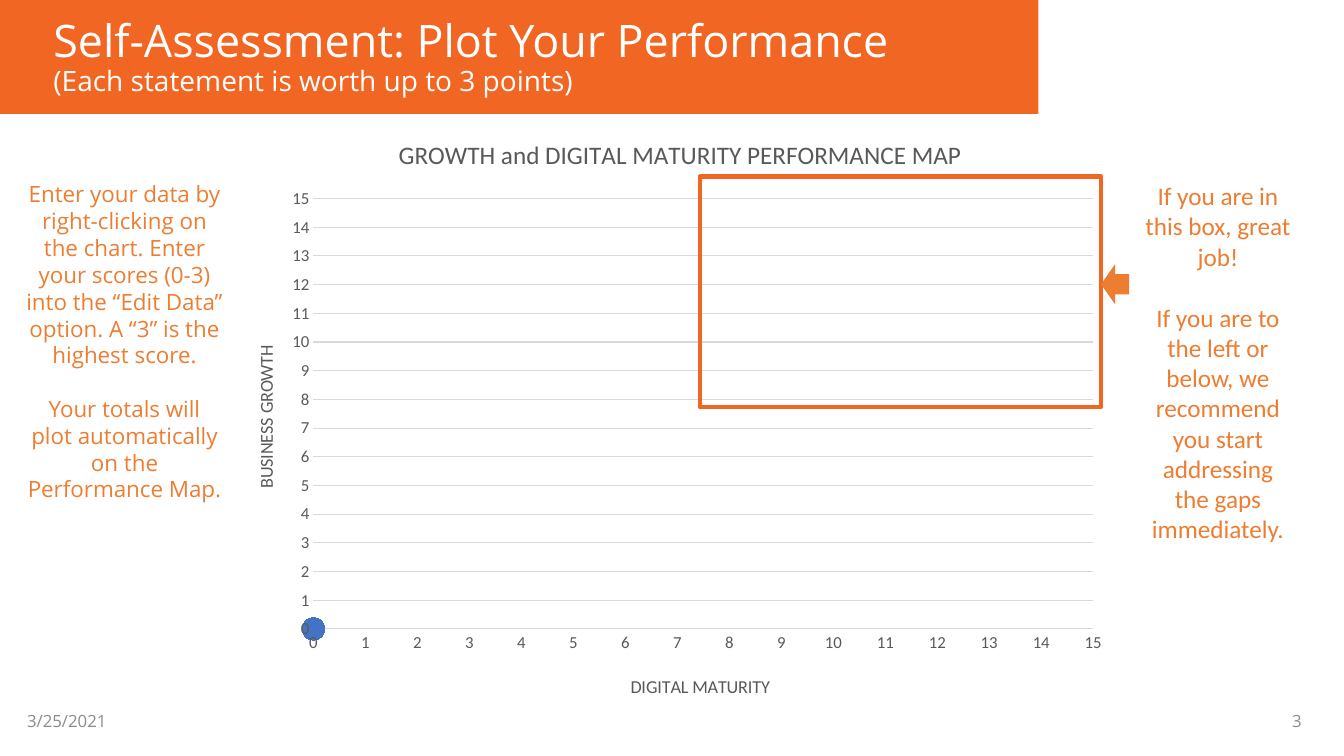
"""Build the self-assessment performance map slide."""
from lxml import etree
from pptx import Presentation
from pptx.chart.data import XyChartData
from pptx.dml.color import RGBColor
from pptx.enum.chart import XL_CHART_TYPE, XL_MARKER_STYLE, XL_TICK_MARK
from pptx.enum.shapes import MSO_SHAPE
from pptx.enum.text import MSO_ANCHOR, MSO_AUTO_SIZE, PP_ALIGN
from pptx.oxml.ns import qn
from pptx.util import Inches, Pt

BANNER = RGBColor(0xF2, 0x66, 0x24)
ORANGE = RGBColor(0xED, 0x7D, 0x31)
WHITE = RGBColor(0xFF, 0xFF, 0xFF)
FOOTER = RGBColor(0x8C, 0x8C, 0x8C)
GRAY = RGBColor(0x59, 0x59, 0x59)
GRID = RGBColor(0xD9, 0xD9, 0xD9)
BLUE = RGBColor(0x44, 0x72, 0xC4)


def style(font, size, color, name):
    font.size, font.name, font.bold = Pt(size), name, False
    font.color.rgb = color


def set_layout(element, index, **fractions):
    old = element.find(qn("c:layout"))
    if old is not None:
        element.remove(old)
    layout = etree.Element(qn("c:layout"))
    manual = etree.SubElement(layout, qn("c:manualLayout"))
    if "w" in fractions:
        etree.SubElement(manual, qn("c:layoutTarget")).set("val", "inner")
    for key in "xy":
        etree.SubElement(manual, qn(f"c:{key}Mode")).set("val", "edge")
    for key, value in fractions.items():
        etree.SubElement(manual, qn(f"c:{key}")).set("val", str(value))
    element.insert(index, layout)


prs = Presentation()
prs.slide_width, prs.slide_height = Inches(13.33), Inches(7.5)
s = prs.slides.add_slide(prs.slide_layouts[5])

banner = s.shapes.add_shape(MSO_SHAPE.RECTANGLE, 0, 0, Inches(10.3), Inches(1.13))
banner.shadow.inherit = False
banner.fill.solid()
banner.fill.fore_color.rgb = BANNER
banner.line.fill.background()
s.shapes._spTree.insert(2, banner._element)

title = s.shapes.title
title.left, title.top = Inches(0.43), Inches(0.03)
title.width, title.height = Inches(11.5), Inches(1.1)
tf = title.text_frame
tf.text = "Self-Assessment: Plot Your Performance\v(Each statement is worth up to 3 points)"
tf.auto_size = MSO_AUTO_SIZE.NONE
tf.vertical_anchor = MSO_ANCHOR.MIDDLE
p = tf.paragraphs[0]
p.alignment, p.line_spacing = PP_ALIGN.LEFT, 0.9
for r, size in zip(p.runs, (32, 20)):
    style(r.font, size, WHITE, "Open Sans")

data = XyChartData()
data.add_series("Series 1").add_data_point(0, 0)
chart = s.shapes.add_chart(XL_CHART_TYPE.XY_SCATTER, Inches(2.22), Inches(1.14),
                           Inches(8.89), Inches(5.93), data).chart
style(chart.font, 12, GRAY, "Calibri")
chart.has_legend = False
chart.plots[0].vary_by_categories = False
set_layout(chart.element.find(".//" + qn("c:plotArea")), 0,
           x=0.1, y=0.14, w=0.87, h=0.72)

series = chart.plots[0].series[0]
series.format.line.fill.background()
series.marker.style, series.marker.size = XL_MARKER_STYLE.CIRCLE, 16
series.marker.format.fill.solid()
series.marker.format.fill.fore_color.rgb = BLUE
series.marker.format.line.color.rgb = BLUE

x_axis, y_axis = chart.category_axis, chart.value_axis
chart.has_title = x_axis.has_title = y_axis.has_title = True
for chart_title, text, size, x, y in (
        (chart.chart_title, "GROWTH and DIGITAL MATURITY PERFORMANCE MAP", 18, 0.19, 0.03),
        (x_axis.axis_title, "DIGITAL MATURITY", 13, 0.45, 0.93),
        (y_axis.axis_title, "BUSINESS GROWTH", 13, 0.03, 0.38)):
    chart_title.text_frame.text = text
    style(chart_title.text_frame.paragraphs[0].runs[0].font, size, GRAY, "Calibri")
    set_layout(chart_title.element, 1, x=x, y=y)

for axis in (x_axis, y_axis):
    axis.minimum_scale, axis.maximum_scale, axis.major_unit = 0, 15, 1
    axis.major_tick_mark = axis.minor_tick_mark = XL_TICK_MARK.NONE
    style(axis.tick_labels.font, 12, GRAY, "Calibri")
x_axis.has_major_gridlines = False
y_axis.has_major_gridlines = True
y_axis.format.line.fill.background()
for line in (x_axis.format.line, y_axis.major_gridlines.format.line):
    line.color.rgb, line.width = GRID, Pt(0.75)

target = s.shapes.add_shape(MSO_SHAPE.RECTANGLE, Inches(6.94), Inches(1.75),
                            Inches(3.98), Inches(2.29))
target.shadow.inherit = False
target.fill.background()
target.line.color.rgb, target.line.width = BANNER, Pt(3)

arrow = s.shapes.add_shape(MSO_SHAPE.LEFT_ARROW, Inches(10.92), Inches(2.62),
                           Inches(0.28), Inches(0.4))
arrow.shadow.inherit = False
arrow.fill.solid()
arrow.fill.fore_color.rgb = ORANGE
arrow.line.fill.background()

entry_note = ("Enter your data by right-clicking on the chart. Enter your scores (0-3) "
              "into the “Edit Data” option. A “3” is the highest score.\n"
              "Your totals will plot automatically on the Performance Map.")
result_note = ("If you are in this box, great job!\n"
               "If you are to the left or below, we recommend you start addressing "
               "the gaps immediately.")
top, middle = MSO_ANCHOR.TOP, MSO_ANCHOR.MIDDLE
left, center, right = PP_ALIGN.LEFT, PP_ALIGN.CENTER, PP_ALIGN.RIGHT
for text, box, anchor, align, size, color, name, gap in (
        (entry_note, (0.16, 1.74, 2.15, 3.6), top, center, 16, ORANGE, "Open Sans", 19),
        (result_note, (11.26, 1.74, 1.64, 3.74), top, center, 18, ORANGE, "Calibri", 22),
        ("3/25/2021", (0.17, 6.95, 3, 0.4), middle, left, 12, FOOTER, "Open Sans", 0),
        ("3", (10.01, 6.95, 3, 0.4), middle, right, 12, FOOTER, "Open Sans", 0)):
    tf = s.shapes.add_textbox(*map(Inches, box)).text_frame
    tf.word_wrap = True
    tf.vertical_anchor = anchor
    tf.text = text
    for p in tf.paragraphs:
        p.alignment = align
        style(p.runs[0].font, size, color, name)
    for p in tf.paragraphs[1:]:
        p.space_before = Pt(gap)

prs.save("out.pptx")
